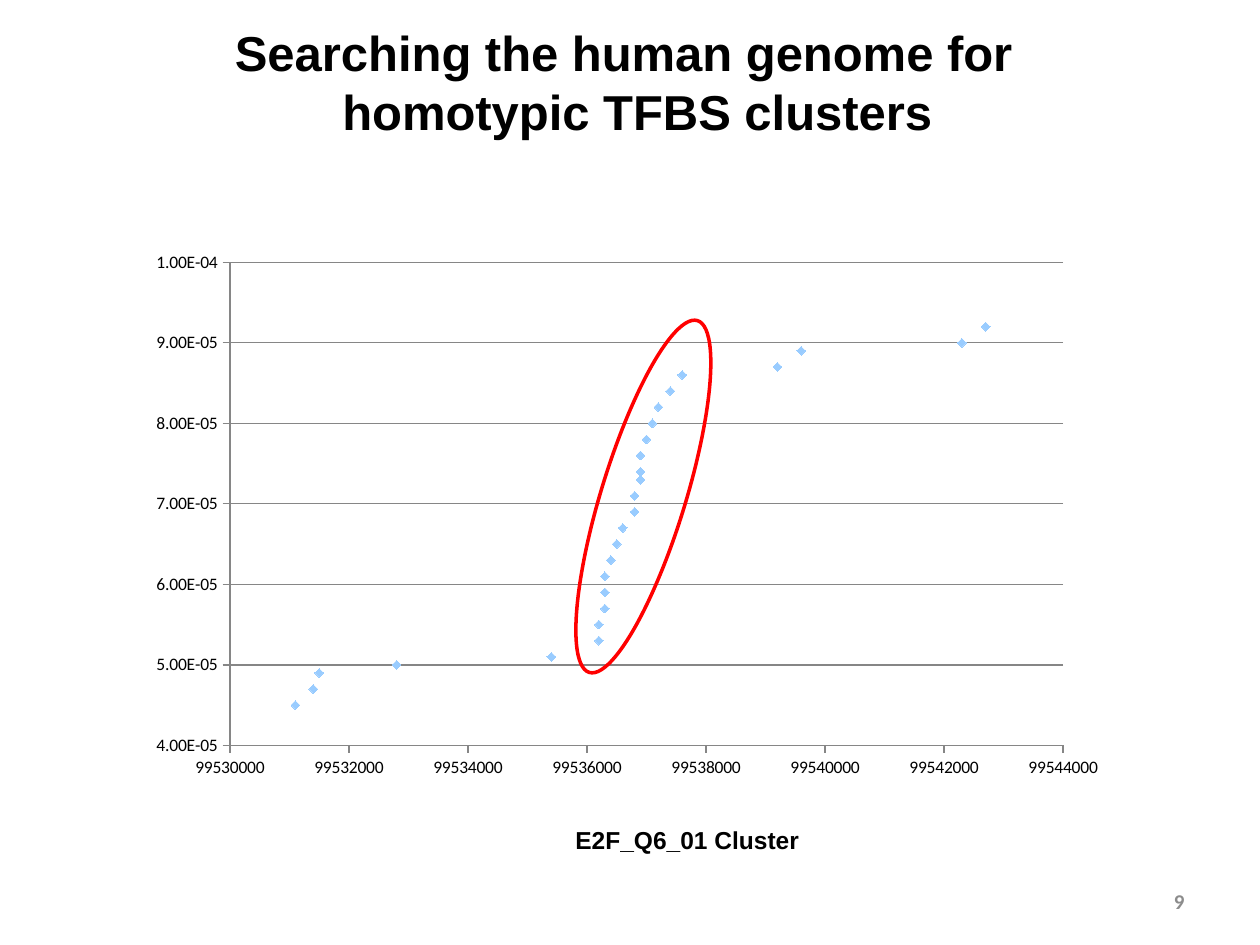
import pptx
import pptx.chart.data
import pptx.dml.color
import pptx.enum.chart
import pptx.enum.shapes
import pptx.enum.text
import pptx.oxml
import pptx.util
from pptx.util import Cm


def color(hex_text):
    return pptx.dml.color.RGBColor.from_string(hex_text)


def write_text(shape, text, size, font="Arial", hex_text="000000", align="CENTER",
               anchor="TOP"):
    frame = shape.text_frame
    frame.word_wrap = True
    frame.vertical_anchor = pptx.enum.text.MSO_ANCHOR[anchor]
    frame.text = text
    paragraph = frame.paragraphs[0]
    paragraph.alignment = pptx.enum.text.PP_ALIGN[align]
    paragraph.space_before = pptx.util.Pt(0)
    for run in paragraph.runs:
        run.font.name = font
        run.font.size = pptx.util.Pt(size)
        run.font.bold = True
        run.font.color.rgb = color(hex_text)


presentation = pptx.Presentation()
presentation.slide_width = Cm(25.4)
presentation.slide_height = Cm(19.05)
slide = presentation.slides.add_slide(presentation.slide_layouts[5])

title = slide.shapes.title
title.left, title.top, title.width, title.height = Cm(0.43), Cm(0.33), Cm(24.56), Cm(2.64)
write_text(title, "Searching the human genome for \v homotypic TFBS clusters", 28)

sequence_start = 99530000
offsets = [1100, 1400, 1500, 2800, 5400, 6200, 6200, 6300, 6300, 6300, 6400, 6500, 6600, 6800,
           6800, 6900, 6900, 6900, 7000, 7100, 7200, 7400, 7600, 9200, 9600, 12300, 12700]
scores = [4.5, 4.7, 4.9, 5.0, 5.1, 5.3, 5.5, 5.7, 5.9, 6.1, 6.3, 6.5, 6.7, 6.9,
          7.1, 7.3, 7.4, 7.6, 7.8, 8.0, 8.2, 8.4, 8.6, 8.7, 8.9, 9.0, 9.2]
chart_data = pptx.chart.data.XyChartData()
binding_sites = chart_data.add_series("Series 1")
for offset, score in zip(offsets, scores):
    binding_sites.add_data_point(sequence_start + offset, round(score * 1e-5, 6))

chart = slide.shapes.add_chart(pptx.enum.chart.XL_CHART_TYPE.XY_SCATTER, Cm(2.74), Cm(4.88),
                               Cm(19.76), Cm(11.02), chart_data).chart
chart.has_legend = False
chart.has_title = False
chart.font.name = "Calibri"
chart.font.size = pptx.util.Pt(10)
chart.font.color.rgb = color("000000")
chart.plots[0].vary_by_categories = False

series = chart.plots[0].series[0]
series.smooth = False
series.format.line.fill.background()
series.marker.style = pptx.enum.chart.XL_MARKER_STYLE.DIAMOND
series.marker.size = 5
series.marker.format.fill.solid()
series.marker.format.fill.fore_color.rgb = color("99CCFF")
series.marker.format.line.fill.background()

for axis, low, high, step, number_format in (
        (chart.category_axis, sequence_start, 99544000, 2000, "0"),
        (chart.value_axis, 4e-5, 1e-4, 1e-5, "0.00E+00")):
    axis.minimum_scale, axis.maximum_scale, axis.major_unit = low, high, step
    axis.major_tick_mark = pptx.enum.chart.XL_TICK_MARK.OUTSIDE
    axis.minor_tick_mark = pptx.enum.chart.XL_TICK_MARK.NONE
    axis.tick_labels.number_format = number_format
    axis.tick_labels.number_format_is_linked = False
    axis.format.line.color.rgb = color("868686")
chart.category_axis.has_major_gridlines = False
chart.value_axis.has_major_gridlines = True
chart.value_axis.major_gridlines.format.line.color.rgb = color("868686")

plot_area = chart.element.chart.plotArea
for layout in plot_area.findall(pptx.oxml.ns.qn("c:layout")):
    plot_area.remove(layout)
plot_area.insert(0, pptx.oxml.parse_xml(
    f'<c:layout {pptx.oxml.ns.nsdecls("c")}><c:manualLayout><c:layoutTarget val="inner"/>'
    '<c:xMode val="edge"/><c:yMode val="edge"/><c:x val="0.096"/><c:y val="0.037"/>'
    '<c:w val="0.85"/><c:h val="0.884"/></c:manualLayout></c:layout>'))

cluster_ring = slide.shapes.add_shape(pptx.enum.shapes.MSO_SHAPE.OVAL,
                                      Cm(12.12), Cm(6.3), Cm(1.7), Cm(7.42))
cluster_ring.rotation = 17.1
cluster_ring.shadow.inherit = False
cluster_ring.fill.background()
cluster_ring.line.color.rgb = color("FF0000")
cluster_ring.line.width = pptx.util.Pt(2)

caption = slide.shapes.add_textbox(Cm(9.09), Cm(16.51), Cm(9.53), Cm(0.86))
write_text(caption, "E2F_Q6_01 Cluster", 14)

page_number = slide.shapes.add_textbox(Cm(18.21), Cm(17.65), Cm(5.92), Cm(1.02))
write_text(page_number, "9", 12, font="Calibri", hex_text="8C8C8C", align="RIGHT",
           anchor="MIDDLE")

presentation.save("out.pptx")
